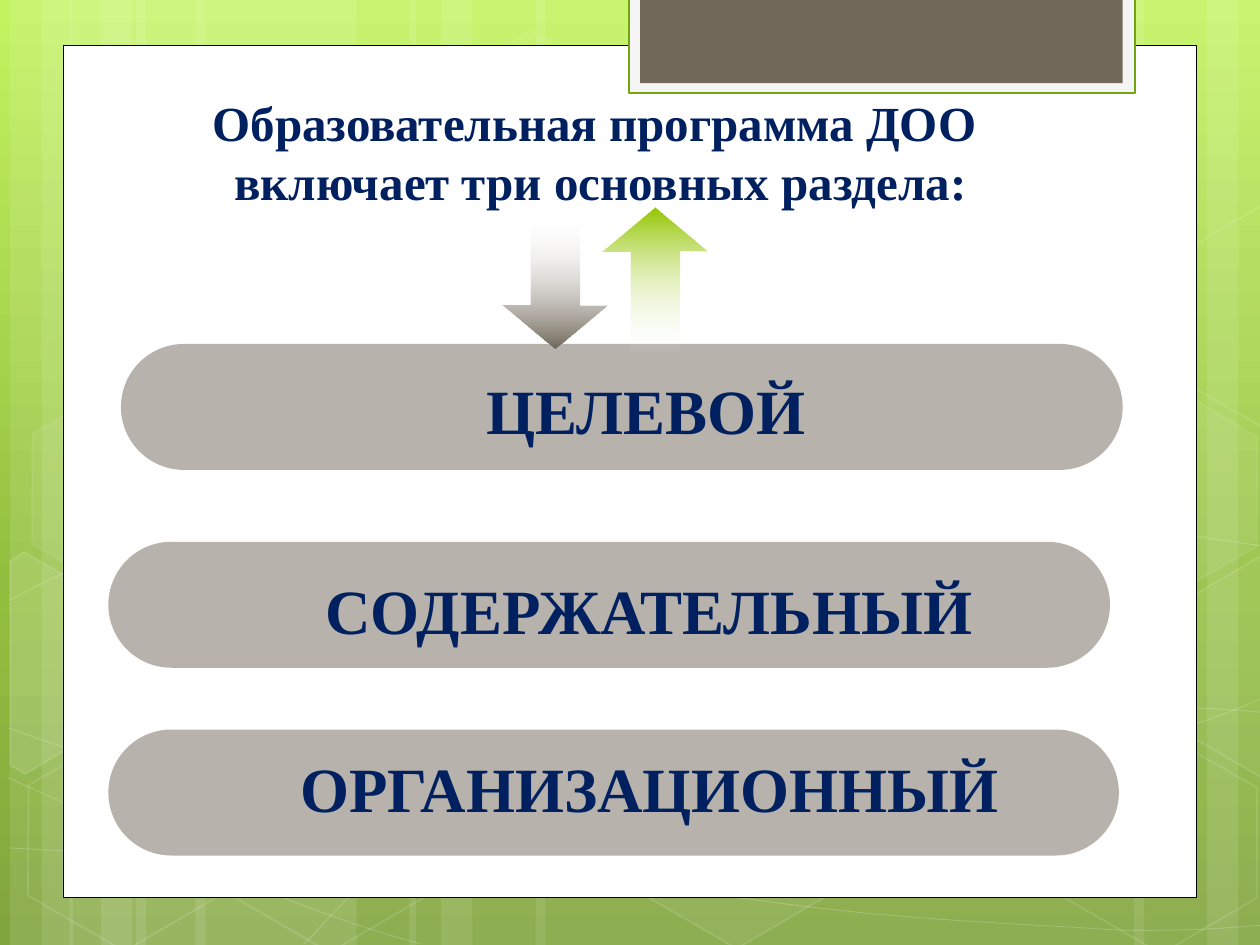
from math import cos, radians, sin

from lxml import etree
from pptx import Presentation
from pptx.dml.color import RGBColor
from pptx.enum.shapes import MSO_SHAPE
from pptx.enum.text import MSO_ANCHOR, PP_ALIGN
from pptx.oxml.ns import qn
from pptx.util import Inches, Pt

RECT, HEX = MSO_SHAPE.RECTANGLE, MSO_SHAPE.HEXAGON
PILL, ARROW = MSO_SHAPE.ROUNDED_RECTANGLE, MSO_SHAPE.RIGHT_ARROW
BOTTOM, MIDDLE, CENTER = MSO_ANCHOR.BOTTOM, MSO_ANCHOR.MIDDLE, PP_ALIGN.CENTER
COLORS = {"white": "FFFFFF", "black": "000000", "pale": "F5F5F5", "edge": "74A510",
          "brown": "71685A", "green": "94C600", "navy": "002060",
          "top": "C3F35F", "mid": "93BF3F", "low": "81A53E"}


def paint(shape, fill=None, alpha=100, line=None, width=1, fade=100):
    """Set fill and line, each with its opacity in percent."""
    shape.shadow.inherit = False
    if fill:
        shape.fill.solid()
        shape.fill.fore_color.rgb = RGBColor.from_string(COLORS[fill])
    else:
        shape.fill.background()
    if line:
        shape.line.color.rgb = RGBColor.from_string(COLORS[line])
        shape.line.width = Pt(width)
    else:
        shape.line.fill.background()
    props = shape.element.spPr
    for path, value in (("a:solidFill", alpha), ("a:ln/a:solidFill", fade)):
        if value < 100:
            for tone in props.xpath(path + "/a:srgbClr"):
                etree.SubElement(tone, qn("a:alpha"), val=str(value * 1000))


def write(text, box, size, space, anchor):
    """Add a centred bold text."""
    label = shapes.add_textbox(*map(Inches, box))
    frame = label.text_frame
    frame.word_wrap = True
    frame.vertical_anchor = anchor
    frame.text = text
    para = frame.paragraphs[0]
    para.alignment = CENTER
    para.line_spacing = space
    for run in para.runs:
        run.font.name = "Times New Roman"
        run.font.size = Pt(size)
        run.font.bold = True
        run.font.color.rgb = RGBColor.from_string(COLORS["navy"])


deck = Presentation()
deck.slide_width, deck.slide_height = Inches(10), Inches(7.5)
slide = deck.slides.add_slide(deck.slide_layouts[6])
shapes = slide.shapes

# Gradients, filled in at the end: element and stops (position, colour, opacity)
back = slide.background.fill
back.gradient()
back.gradient_angle = 270
blends = [(slide.element, [(0, "top", 100), (62, "mid", 100), (100, "low", 100)])]

# Pale vertical stripes
stripes = [(1.08, 1.75), (0.08, 0.5), (0.33, 0.83), (1.55, 1.75), (0.55, 0.5), (0.8, 0.83),
           (7.33, 1.75), (9.58, 0.5), (9, 0.83), (4.25, 3.08), (3.25, 0.5), (3.5, 0.83)]
for left, width in stripes:
    stripe = shapes.add_shape(RECT, Inches(left), 0, Inches(width), Inches(7.5))
    paint(stripe, "white", 10)

# Thin waves: a start point, then cubic Bezier pieces
waves = [
    [(0.07, 6.73), (0.61, 6.76, 1.15, 6.79, 1.9, 6.78), (2.65, 6.77, 3.58, 6.75, 4.58, 6.65),
     (5.58, 6.55, 7, 6.36, 7.92, 6.17), (8.83, 5.98, 9.77, 5.68, 10.07, 5.51)],
    [(0.07, 4.77), (0.36, 4.61, 0.65, 4.46, 1.21, 4.31), (1.78, 4.16, 2.59, 3.94, 3.47, 3.87),
     (4.36, 3.8, 5.44, 3.79, 6.54, 3.87), (7.64, 3.95, 9.47, 4.26, 10.07, 4.34)],
    [(0.06, 6.17), (1.27, 6.72, 2.47, 7.27, 3.34, 7.49)],
    [(0.07, 5.78), (0.38, 5.89, 0.7, 6, 1.28, 6.16), (1.86, 6.31, 2.73, 6.56, 3.57, 6.73),
     (4.4, 6.9, 5.45, 7.08, 6.28, 7.18), (7.11, 7.29, 8, 7.33, 8.53, 7.36),
     (9.05, 7.4, 9.19, 7.38, 9.45, 7.38), (9.71, 7.37, 9.89, 7.35, 10.07, 7.34)],
    [(2.42, 7.49), (2.6, 7.29, 2.78, 7.09, 3.02, 6.91), (3.26, 6.73, 3.6, 6.53, 3.88, 6.39),
     (4.16, 6.25, 4.33, 6.19, 4.7, 6.09), (5.06, 5.99, 5.73, 5.85, 6.08, 5.78),
     (6.44, 5.71, 6.49, 5.71, 6.8, 5.69), (7.11, 5.66, 7.6, 5.63, 7.94, 5.62),
     (8.29, 5.61, 8.86, 5.62, 8.86, 5.62), (8.86, 5.62, 9.53, 5.62, 9.53, 5.62),
     (9.71, 5.63, 9.88, 5.64, 9.97, 5.65), (10.06, 5.66, 10.03, 5.65, 10.06, 5.66)],
]
for start, *curves in waves:
    pen = shapes.build_freeform(*map(Inches, start))
    pen.add_line_segments([(Inches(c[4]), Inches(c[5])) for c in curves], close=False)
    wave = pen.convert_to_shape()
    # Bend each straight piece into its curve
    for piece, curve in zip(wave.element.spPr.xpath(".//a:lnTo"), curves):
        piece.tag = qn("a:cubicBezTo")
        piece.remove(piece[0])
        for x, y in zip(curve[::2], curve[1::2]):
            etree.SubElement(piece, qn("a:pt"), x=str(Inches(x) - wave.left),
                             y=str(Inches(y) - wave.top))
    paint(wave, line="white", width=0.5, fade=20)

# Hexagons: left, top, fill opacity, line opacity
TILT = 30
cells = [(3.34, 0.36, 4, 8), (4.97, 5.89, 6, 12), (0.11, 5.91, 0, 12),
         (0.14, 3.12, 7, 8), (1.74, 5.92, 0, 12), (7.53, 4.53, 10, 12),
         (8.34, 5.93, 0, 12), (8.34, 3.14, 7, 8)]
for left, top, alpha, fade in cells:
    cell = shapes.add_shape(HEX, Inches(left), Inches(top), Inches(1.75), Inches(1.52))
    cell.rotation = TILT
    cell.adjustments[0], cell.adjustments[1] = 0.285, 1.155
    paint(cell, "white" if alpha else None, alpha, "white", 1, fade)

# Cut hexagons: centre, fill opacity, corners as seen; turned back before the tilt
parts = [
    (0.36, 5.35, 10, [(0.08, 4.45), (0.19, 4.38), (0.96, 4.82), (0.95, 5.7),
                      (0.2, 6.14), (0.08, 6.07)]),
    (9.85, 5.2, 4, [(9.26, 4.85), (10.01, 4.41), (10.09, 4.46), (10.09, 6.13),
                    (10.02, 6.17), (9.26, 5.73)]),
    (9.85, 2.41, 0, [(9.26, 2.07), (10.01, 1.63), (10.1, 1.68), (10.09, 3.35),
                     (10.02, 3.39), (9.26, 2.95)]),
]
c, s = cos(radians(TILT)), sin(radians(TILT))
for mx, my, alpha, points in parts:
    spots = [(Inches(mx + (x - mx) * c + (y - my) * s),
              Inches(my - (x - mx) * s + (y - my) * c)) for x, y in points]
    pen = shapes.build_freeform(*spots[0])
    pen.add_line_segments(spots[1:], close=True)
    part = pen.convert_to_shape()
    part.rotation = TILT
    paint(part, "white" if alpha else None, alpha, "white", 1, 12)

# White panel and top tab
panels = [((0.5, 0.36, 9, 6.76), "white", "black", 0.5),
          ((4.99, -0.02, 4.02, 0.76), "pale", "edge", 1.25),
          ((5.08, -0.02, 3.83, 0.68), "brown", None, 0)]
for box, fill, line, width in panels:
    panel = shapes.add_shape(RECT, *map(Inches, box))
    paint(panel, fill, line=line, width=width)

# Title
write("Образовательная программа ДОО \vвключает три основных раздела:",
      (0.86, 0.47, 7.81, 1.25), 28, 1, BOTTOM)

# Three sections
bars = [("ЦЕЛЕВОЙ", (0.96, 2.73, 7.95, 1), (1.64, 2.96, 6.98, 0.65)),
        ("СОДЕРЖАТЕЛЬНЫЙ", (0.86, 4.3, 7.95, 1), (1.72, 4.55, 6.86, 0.65)),
        ("ОРГАНИЗАЦИОННЫЙ", (0.86, 5.79, 8.02, 1), (1.81, 5.96, 6.69, 0.65))]
for text, box, place in bars:
    bar = shapes.add_shape(PILL, *map(Inches, box))
    bar.adjustments[0] = 0.5
    paint(bar, "brown", 50)
    write(text, place, 36, 0.9, MIDDLE)

# Arrows down and up
arrows = [(3.87, 1.07, 90, "brown"), (4.61, 1.18, 270, "green")]
for left, width, turn, color in arrows:
    arrow = shapes.add_shape(ARROW, Inches(left), Inches(1.82), Inches(width), Inches(0.83))
    arrow.rotation = turn
    arrow.adjustments[0], arrow.adjustments[1] = 0.465, 0.421
    paint(arrow)
    arrow.fill.gradient()
    arrow.fill.gradient_angle = 0
    blends.append((arrow.element.spPr, [(0, "white", 0), (100, color, 100)]))

# Gradient stops
for owner, stops in blends:
    group = owner.find(".//" + qn("a:gsLst"))
    for old in list(group):
        group.remove(old)
    for pos, color, alpha in stops:
        stop = etree.SubElement(group, qn("a:gs"), pos=str(pos * 1000))
        tone = etree.SubElement(stop, qn("a:srgbClr"), val=COLORS[color])
        if alpha < 100:
            etree.SubElement(tone, qn("a:alpha"), val=str(alpha * 1000))

deck.save("out.pptx")
